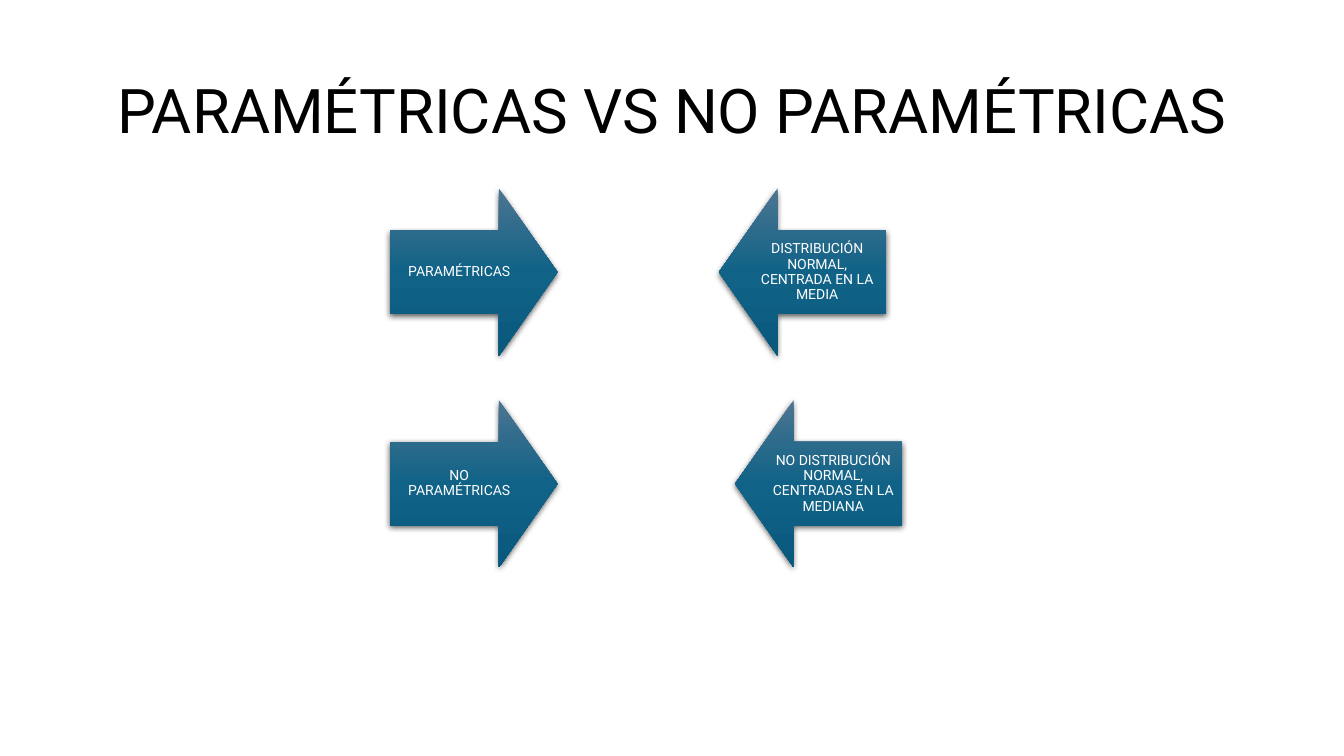
from pptx import Presentation
from pptx.dml.color import RGBColor
from pptx.enum.shapes import MSO_SHAPE
from pptx.enum.text import MSO_ANCHOR, MSO_AUTO_SIZE, PP_ALIGN
from pptx.oxml import parse_xml
from pptx.oxml.ns import nsdecls
from pptx.util import Inches, Pt

DOWN = MSO_SHAPE.DOWN_ARROW
MIDDLE = MSO_ANCHOR.MIDDLE
CENTER = PP_ALIGN.CENTER
NO_FIT = MSO_AUTO_SIZE.NONE

COLORS = {"title": "000000", "label": "FFFFFF", "top": "4C7591",
          "mid": "106287", "low": "09597D", "shade": "000000"}
SIDE, BODY_W, BODY_H = 1.66, 1.37, 0.83


def write(box, text, size, color, inset=None):
    frame = box.text_frame
    frame.word_wrap = True
    frame.auto_size = NO_FIT
    frame.vertical_anchor = MIDDLE
    if inset is not None:
        frame.margin_left = frame.margin_right = Inches(inset)
        frame.margin_top = frame.margin_bottom = Inches(inset)
    para = frame.paragraphs[0]
    para.alignment = CENTER
    para.line_spacing = 0.9
    run = para.add_run()
    run.text = text
    run.font.name = "Roboto"
    run.font.size = Pt(size)
    run.font.color.rgb = RGBColor.from_string(COLORS[color])


def paint(shape):
    """Upright three-stop gradient, no outline, soft shadow below."""
    stops = "".join(
        f'<a:gs pos="{pos}"><a:srgbClr val="{COLORS[name]}"/></a:gs>'
        for pos, name in ((0, "top"), (50000, "mid"), (100000, "low")))
    parts = (
        f'<a:gradFill {nsdecls("a")} rotWithShape="0"><a:gsLst>{stops}</a:gsLst>'
        '<a:lin ang="5400000" scaled="0"/></a:gradFill>',
        f'<a:ln {nsdecls("a")}><a:noFill/></a:ln>',
        f'<a:effectLst {nsdecls("a")}><a:outerShdw blurRad="57150" dist="19050" '
        'dir="5400000" algn="ctr" rotWithShape="0">'
        f'<a:srgbClr val="{COLORS["shade"]}"><a:alpha val="63000"/></a:srgbClr>'
        '</a:outerShdw></a:effectLst>')
    for part in parts:
        shape._element.spPr.append(parse_xml(part))


prs = Presentation()
prs.slide_width, prs.slide_height = Inches(13.33), Inches(7.5)
slide = prs.slides.add_slide(prs.slide_layouts[5])

# Title
title = slide.shapes.title
title.left, title.top = Inches(0.92), Inches(0.4)
title.width, title.height = Inches(11.5), Inches(1.45)
write(title, "PARAMÉTRICAS VS NO PARAMÉTRICAS", 44, "title")

# Rows of facing arrows: top, then left edge, turn and label of each arrow
rows = [
    (1.87, [(3.87, 270, "PARAMÉTRICAS"),
            (7.13, 90, "DISTRIBUCIÓN NORMAL, CENTRADA EN LA MEDIA")]),
    (3.97, [(3.87, 270, "NO PARAMÉTRICAS"),
            (7.29, 90, "NO DISTRIBUCIÓN NORMAL, CENTRADAS EN LA MEDIANA")]),
]
for top, pair in rows:
    group = slide.shapes.add_group_shape()
    for left, turn, label in pair:
        arrow = group.shapes.add_shape(
            DOWN, Inches(left), Inches(top), Inches(SIDE), Inches(SIDE))
        arrow.adjustments[0], arrow.adjustments[1] = 0.5, 0.35
        arrow.rotation = turn
        paint(arrow)

        # The label covers the shaft, away from the tip
        shift = SIDE - BODY_W if turn == 90 else 0
        box = group.shapes.add_textbox(
            Inches(left + shift), Inches(top + (SIDE - BODY_H) / 2),
            Inches(BODY_W), Inches(BODY_H))
        write(box, label, 10, "label", inset=0.08)

prs.save("out.pptx")
